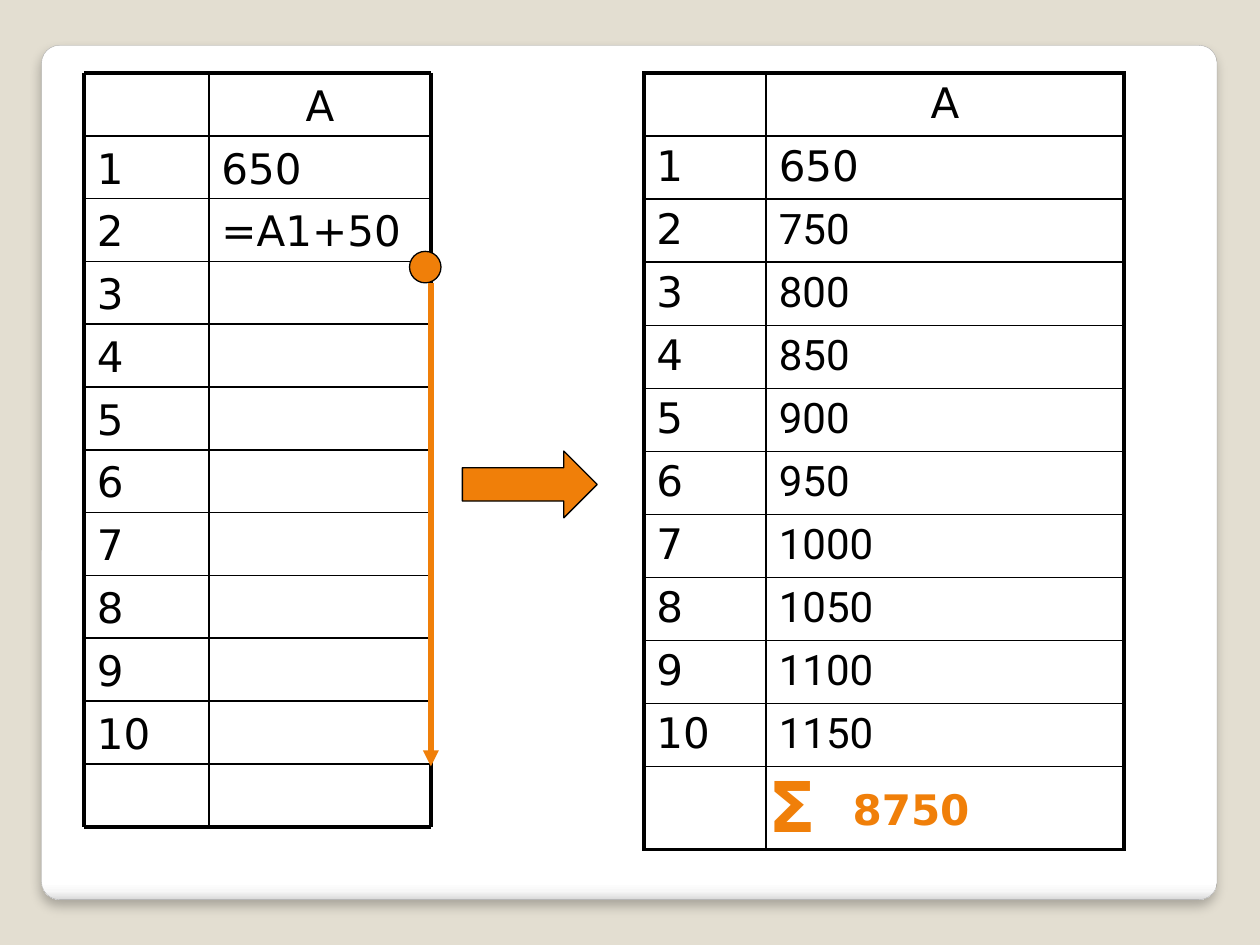
from dataclasses import dataclass

from lxml.etree import SubElement
from pptx import Presentation
from pptx.dml.color import RGBColor
from pptx.enum.shapes import MSO_CONNECTOR as Line, MSO_SHAPE as Shape
from pptx.enum.text import MSO_AUTO_SIZE as AutoSize, PP_ALIGN as Align
from pptx.oxml import parse_xml
from pptx.oxml.ns import nsdecls, qn
from pptx.util import Inches, Pt


@dataclass(frozen=True)
class Theme:
    backdrop: str = "E3DED1"
    card_edge: str = "A4A4A4"
    ink: str = "000000"
    accent: str = "F07F09"
    font: str = "DejaVu Sans"
    result_font: str = "Roboto"
    text_size: float = 24
    sigma_size: float = 40
    space_before: float = 2.5
    frame: float = 2.25
    rule: float = 1
    outline: float = 0.75
    fill_handle: float = 3


@dataclass(frozen=True)
class Box:
    left: float
    top: float
    width: float
    height: float

    def share(self, x, y, width, height):
        """Box given as shares of this one."""
        return Box(self.left + x * self.width, self.top + y * self.height,
                   width * self.width, height * self.height)

    def emu(self):
        return [Inches(v) for v in (self.left, self.top, self.width, self.height)]


THEME = Theme()
PAGE = Box(0, 0, 10, 7.5)
HEADER = "А"
ROW_NUMBERS = [str(n) for n in range(1, 11)]
FORMULAS = ["650", "=А1+50"]
RESULTS = ["650"] + [str(n) for n in range(750, 1200, 50)]
CARD_STOPS = [(0, "FFFFFF"), (98, "FFFFFF"), (99, "F7F7F7"), (100, "DADADA")]


def rgb(value):
    return RGBColor.from_string(value)


def write(frame, text, size=THEME.text_size, color=THEME.ink, font=THEME.font,
          bold=False, align=Align.LEFT, before=THEME.space_before):
    paragraph = frame.paragraphs[0]
    paragraph.alignment = align
    paragraph.space_before = Pt(before)
    run = paragraph.add_run()
    run.text = text
    run.font.size, run.font.name, run.font.bold = Pt(size), font, bold
    run.font.color.rgb = rgb(color)


def add_label(slide, box, text, grow=False, **style):
    frame = slide.shapes.add_textbox(*box.emu()).text_frame
    frame.word_wrap = True
    if grow:
        frame.auto_size = AutoSize.SHAPE_TO_FIT_TEXT
    write(frame, text, **style)


def add_line(slide, x1, y1, x2, y2, width, color=THEME.ink):
    line = slide.shapes.add_connector(
        Line.STRAIGHT, *[Inches(v) for v in (x1, y1, x2, y2)])
    line.line.width = Pt(width)
    line.line.color.rgb = rgb(color)
    SubElement(line._element.spPr, qn("a:effectLst"))
    return line


def add_accent_shape(slide, kind, box):
    shape = slide.shapes.add_shape(kind, *box.emu())
    shape.shadow.inherit = False
    shape.fill.solid()
    shape.fill.fore_color.rgb = rgb(THEME.accent)
    shape.line.color.rgb = rgb(THEME.ink)
    shape.line.width = Pt(THEME.outline)


def add_card(slide, box):
    card = slide.shapes.add_shape(Shape.ROUNDED_RECTANGLE, *box.emu())
    card.adjustments[0] = 0.021
    card.line.color.rgb = rgb(THEME.card_edge)
    card.line.width = Pt(0.16)
    card.fill.gradient()
    card.fill.gradient_angle = 270
    stops = card._element.spPr.find(qn("a:gradFill")).find(qn("a:gsLst"))
    for old in list(stops):
        stops.remove(old)
    for position, color in CARD_STOPS:
        stop = SubElement(stops, qn("a:gs"), pos=str(position * 1000))
        SubElement(stop, qn("a:srgbClr"), val=color)
    card._element.spPr.append(parse_xml(
        f'<a:effectLst {nsdecls("a")}><a:outerShdw blurRad="{Pt(6)}" dist="{Pt(4)}" '
        f'dir="5400000" algn="t" rotWithShape="0"><a:srgbClr val="{THEME.ink}">'
        '<a:alpha val="25000"/></a:srgbClr></a:outerShdw></a:effectLst>'))


def add_formula_sheet(slide, box):
    """Ruled sheet with the two typed cells and the fill-down handle."""
    rows = len(ROW_NUMBERS) + 2
    row, split = 1 / rows, 0.36
    right, bottom = box.left + box.width, box.top + box.height

    add_label(slide, box.share(split, 0, 1 - split, row), HEADER, align=Align.CENTER)
    for index, number in enumerate(ROW_NUMBERS, 1):
        add_label(slide, box.share(0, index * row, split, row), number)
    for index, formula in enumerate(FORMULAS, 1):
        add_label(slide, box.share(split, index * row, 1 - split, row), formula)

    for index in range(rows + 1):
        y = box.top + index * row * box.height
        add_line(slide, box.left, y, right, y,
                 THEME.frame if index in (0, rows) else THEME.rule)
    for offset, width in ((0, THEME.frame), (split, THEME.rule), (1, THEME.frame)):
        x = box.left + offset * box.width
        add_line(slide, x, box.top, x, bottom, width)

    knob = 0.25
    knob_top = box.top + 3 * row * box.height - 0.08
    add_accent_shape(slide, Shape.OVAL, Box(right - 0.17, knob_top, knob, knob))
    handle = add_line(slide, right, knob_top + knob, right, bottom - row * box.height + 0.02,
                      THEME.fill_handle, THEME.accent)
    SubElement(handle._element.spPr.find(qn("a:ln")), qn("a:tailEnd"), type="triangle")


def set_borders(cell, widths):
    """Widths run left, right, top, bottom."""
    properties = cell._tc.get_or_add_tcPr()
    for index, (side, width) in enumerate(zip("LRTB", widths)):
        properties.insert(index, parse_xml(
            f'<a:ln{side} {nsdecls("a")} w="{Pt(width)}"><a:solidFill>'
            f'<a:srgbClr val="{THEME.ink}"/></a:solidFill></a:ln{side}>'))


def add_result_table(slide, box):
    contents = [("", HEADER), *zip(ROW_NUMBERS, RESULTS), ("", "")]
    last = len(contents) - 1
    total_height = 0.66
    table = slide.shapes.add_table(len(contents), 2, *box.emu()).table
    table.first_row = table.horz_banding = False
    for column, width_share in zip(table.columns, (0.255, 0.745)):
        column.width = Inches(width_share * box.width)
    for r, texts in enumerate(contents):
        table.rows[r].height = Inches(
            total_height if r == last else (box.height - total_height) / last)
        for c, text in enumerate(texts):
            cell = table.cell(r, c)
            cell.fill.background()
            on_frame = (c == 0, c == 1, r == 0, r == last)
            set_borders(cell, [THEME.frame if edge else THEME.rule for edge in on_frame])
            if text:
                write(cell.text_frame, text,
                      font=THEME.result_font if c == 1 and r > 1 else THEME.font,
                      align=Align.CENTER if r == 0 else Align.LEFT)


def add_total(slide, box):
    style = dict(grow=True, color=THEME.accent, bold=True, before=0)
    add_label(slide, box.share(0, 0, 0.6, 1), "Σ", size=THEME.sigma_size, **style)
    add_label(slide, box.share(0.32, 0.22, 0.68, 0.65), "8750", **style)


def main():
    deck = Presentation()
    deck.slide_width, deck.slide_height = Inches(PAGE.width), Inches(PAGE.height)
    slide = deck.slides.add_slide(deck.slide_layouts[6])
    slide.background.fill.solid()
    slide.background.fill.fore_color.rgb = rgb(THEME.backdrop)

    add_card(slide, PAGE.share(0.033, 0.048, 0.933, 0.904))
    add_formula_sheet(slide, Box(0.67, 0.58, 2.75, 5.98))
    add_accent_shape(slide, Shape.RIGHT_ARROW, Box(3.67, 3.58, 1.07, 0.53))
    add_result_table(slide, Box(5.11, 0.58, 3.81, 6.08))
    add_total(slide, Box(6, 6, 2.09, 0.77))
    deck.save("out.pptx")


if __name__ == "__main__":
    main()
